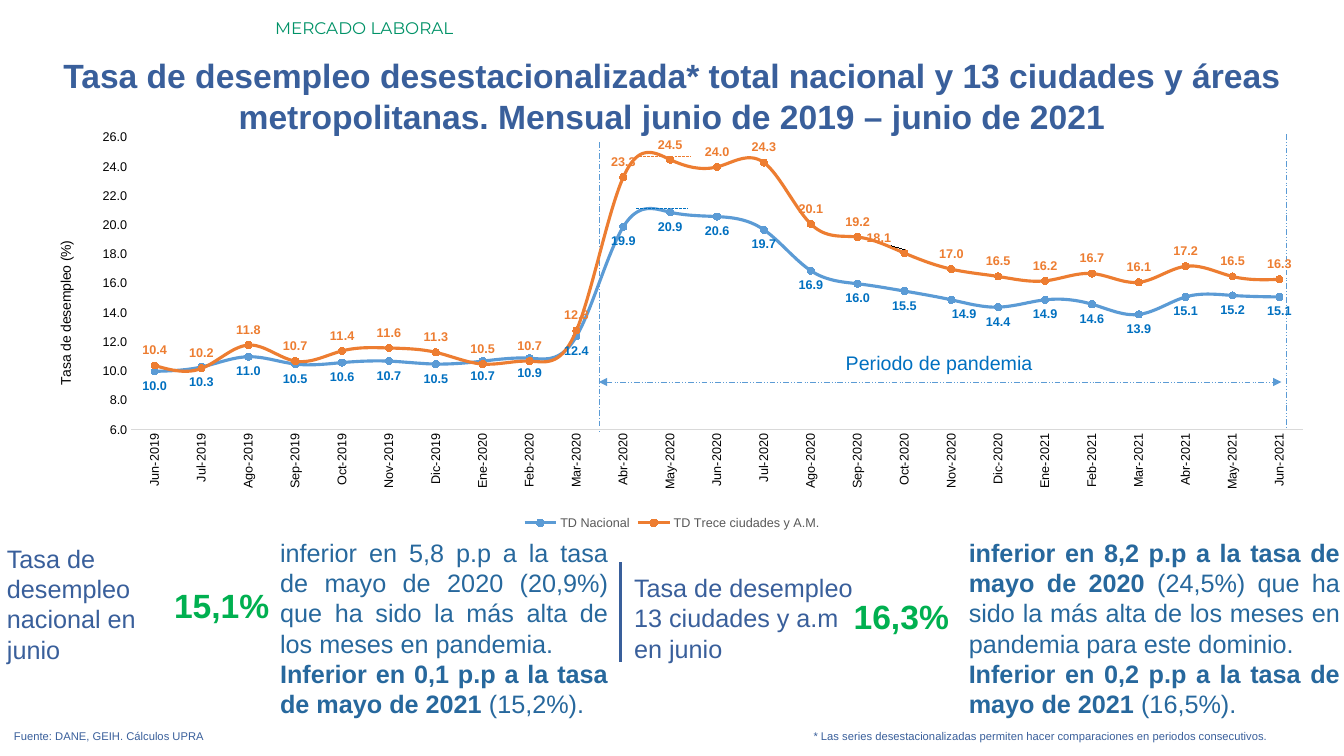
from dataclasses import dataclass

from lxml import etree
from pptx import Presentation
from pptx.chart.chart import Chart
from pptx.chart.data import CategoryChartData
from pptx.dml.color import RGBColor
from pptx.enum.chart import (
    XL_CHART_TYPE, XL_LABEL_POSITION, XL_LEGEND_POSITION, XL_MARKER_STYLE,
    XL_TICK_MARK)
from pptx.enum.dml import MSO_LINE
from pptx.enum.shapes import MSO_CONNECTOR
from pptx.enum.text import MSO_AUTO_SIZE, PP_ALIGN
from pptx.oxml.ns import qn
from pptx.util import Inches, Pt

LEFT, MID, RIGHT, JUST = (
    PP_ALIGN.LEFT, PP_ALIGN.CENTER, PP_ALIGN.RIGHT, PP_ALIGN.JUSTIFY)
DASH, DOT, DOTS = (
    MSO_LINE.LONG_DASH, MSO_LINE.LONG_DASH_DOT, MSO_LINE.DASH_DOT_DOT)
ABOVE, BELOW = XL_LABEL_POSITION.ABOVE, XL_LABEL_POSITION.BELOW
LINES = XL_CHART_TYPE.LINE_MARKERS
CIRCLE = XL_MARKER_STYLE.CIRCLE
NO_TICK = XL_TICK_MARK.NONE
BOTTOM = XL_LEGEND_POSITION.BOTTOM
STRAIGHT = MSO_CONNECTOR.STRAIGHT
FIT = MSO_AUTO_SIZE.SHAPE_TO_FIT_TEXT

NAVY = RGBColor(0x39, 0x5F, 0x9B)
TEAL = RGBColor(0x27, 0x68, 0x9D)
PINE = RGBColor(0x00, 0x92, 0x67)
GREEN = RGBColor(0x00, 0xB0, 0x50)
BLUE = RGBColor(0x00, 0x70, 0xC0)
SKY = RGBColor(0x5B, 0x9B, 0xD5)
ORANGE = RGBColor(0xED, 0x7D, 0x31)
BLACK = RGBColor(0x00, 0x00, 0x00)
GREY = RGBColor(0x59, 0x59, 0x59)
PALE = RGBColor(0xD9, 0xD9, 0xD9)

Run = tuple[str, bool]


@dataclass
class Note:
    box: tuple[float, float, float, float]
    paras: list[list[Run]]
    size: float
    color: RGBColor
    align: PP_ALIGN = LEFT
    font: str = "Arial"
    tab: float = 0


@dataclass
class Rule:
    start: tuple[float, float]
    end: tuple[float, float]
    color: RGBColor
    width: float
    dash: MSO_LINE | None = None
    heads: bool = False


@dataclass
class Trend:
    name: str
    vals: list[float]
    color: RGBColor
    ink: RGBColor
    side: XL_LABEL_POSITION
    point: int
    shift: float


NOTES = [
    Note((2.63, 0.13, 10.7, 0.3), [[("MERCADO LABORAL", False)]], 12, PINE,
         font="Montserrat"),
    Note((0, 0.5, 13.33, 0.91),
         [[("Tasa de desempleo desestacionalizada* total nacional y 13 ciudades y áreas "
            "metropolitanas. Mensual junio de 2019 – junio de 2021", True)]],
         24, NAVY, MID),
    Note((0.04, 7.19, 12.91, 0.24),
         [[("Fuente: DANE, GEIH. Cálculos UPRA\t* Las series desestacionalizadas "
            "permiten hacer comparaciones en periodos consecutivos.", False)]],
         8, NAVY, tab=7.93),
    Note((-0.03, 5.34, 2.22, 1.31),
         [[("Tasa de desempleo nacional en", False)], [("junio", False)]], 18, NAVY),
    Note((1.61, 5.75, 1.16, 0.5), [[("15,1%", True)]], 24, GREEN, RIGHT),
    Note((2.68, 5.28, 3.45, 1.92),
         [[("inferior en 5,8 p.p a la tasa de mayo de 2020 (20,9%) que ha sido la más "
            "alta de los meses en pandemia.", False)],
          [("Inferior en 0,1 p.p a la tasa de mayo de 2021 ", True),
           ("(15,2%).", False)]], 18, TEAL, JUST),
    Note((6.19, 5.63, 2.45, 1.31),
         [[("Tasa de desempleo", False)], [("13 ciudades y a.m en junio", False)]],
         18, NAVY),
    Note((8.06, 5.86, 1.45, 0.5), [[("16,3%", True)]], 24, GREEN, RIGHT),
    Note((9.51, 5.28, 3.88, 1.92),
         [[("inferior en 8,2 p.p a la tasa de mayo de 2020 ", True),
           ("(24,5%) que ha sido la más alta de los meses en pandemia para este "
            "dominio.", False)],
          [("Inferior en 0,2 p.p a la tasa de mayo de 2021 ", True),
           ("(16,5%).", False)]], 18, TEAL, JUST),
    Note((8.29, 3.43, 2.63, 0.34), [[("Periodo de pandemia", False)]], 14, BLUE),
]
BACK = [
    Rule((6.15, 5.58), (6.15, 6.57), NAVY, 2.25),
    Rule((5.94, 1.41), (5.94, 4.29), SKY, 0.5, DOT),
    Rule((12.76, 1.33), (12.76, 4.25), SKY, 0.5, DOTS),
    Rule((5.94, 3.79), (12.71, 3.79), SKY, 0.5, DOTS, True),
]
FRONT = [
    Rule((6.3, 1.55), (6.85, 1.55), ORANGE, 0.25, DASH),
    Rule((6.31, 2.07), (6.82, 2.07), BLUE, 0.25, DASH),
]
TRENDS = [
    Trend("TD Nacional",
          [10, 10.3, 11, 10.5, 10.6, 10.7, 10.5, 10.7, 10.9, 12.4, 19.9, 20.9, 20.6,
           19.7, 16.9, 16, 15.5, 14.9, 14.4, 14.9, 14.6, 13.9, 15.1, 15.2, 15.1],
          SKY, BLUE, BELOW, 17, 0.01),
    Trend("TD Trece ciudades y A.M.",
          [10.4, 10.2, 11.8, 10.7, 11.4, 11.6, 11.3, 10.5, 10.7, 12.8, 23.3, 24.5, 24,
           24.3, 20.1, 19.2, 18.1, 17, 16.5, 16.2, 16.7, 16.1, 17.2, 16.5, 16.3],
          ORANGE, ORANGE, ABOVE, 16, -0.02),
]
MONTHS = "Ene Feb Mar Abr May Jun Jul Ago Sep Oct Nov Dic".split()
CATS = [f"{MONTHS[n % 12]}-{2019 + n // 12}" for n in range(5, 30)]
FORMAT = "#,##0.0"
UPWARD = "-5400000"


def add_note(slide, note: Note) -> None:
    frame = slide.shapes.add_textbox(*map(Inches, note.box)).text_frame
    frame.word_wrap = True
    frame.auto_size = FIT
    for i, runs in enumerate(note.paras):
        para = frame.add_paragraph() if i else frame.paragraphs[0]
        para.alignment = note.align
        if note.tab:
            tabs = etree.SubElement(para._p.get_or_add_pPr(), qn("a:tabLst"))
            etree.SubElement(tabs, qn("a:tab"), pos=str(Inches(note.tab)), algn="l")
        for text, bold in runs:
            run = para.add_run()
            run.text = text
            style(run.font, note.size, note.color, bold, note.font)


def style(font, size: float, color: RGBColor, bold: bool = False,
          name: str = "Arial") -> None:
    font.size, font.bold, font.name = Pt(size), bold, name
    font.color.rgb = color


def add_rule(slide, rule: Rule) -> None:
    line = slide.shapes.add_connector(STRAIGHT, *map(Inches, rule.start + rule.end))
    line.line.color.rgb = rule.color
    line.line.width = Pt(rule.width)
    if rule.dash:
        line.line.dash_style = rule.dash
    if rule.heads:
        for tag in ("a:headEnd", "a:tailEnd"):
            etree.SubElement(line.line._get_or_add_ln(), qn(tag), type="triangle")
    etree.SubElement(line._element.spPr, qn("a:effectLst"))


def set_place(part, spot: int, **vals: str | float) -> None:
    old = part.find(qn("c:layout"))
    if old is not None:
        part.remove(old)
    layout = etree.Element(qn("c:layout"))
    manual = etree.SubElement(layout, qn("c:manualLayout"))
    for key, val in vals.items():
        etree.SubElement(manual, qn(f"c:{key}"), val=str(val))
    part.insert(spot, layout)


def add_trend(series, trend: Trend) -> None:
    series.smooth = True
    series.format.line.color.rgb = trend.color
    series.format.line.width = Pt(2.25)
    mark = series.marker
    mark.style, mark.size = CIRCLE, 5
    mark.format.fill.solid()
    mark.format.fill.fore_color.rgb = trend.color
    mark.format.line.color.rgb = trend.color
    labels = series.data_labels
    labels.show_value = True
    labels.number_format, labels.number_format_is_linked = FORMAT, False
    label = series.points[trend.point].data_label
    for item in (labels, label):
        item.position = trend.side
        style(item.font, 9, trend.ink, True)
    set_place(label._dLbl, 1, x=trend.shift, y=0)


def set_axes(chart: Chart) -> None:
    cat, val = chart.category_axis, chart.value_axis
    for axis in (cat, val):
        axis.major_tick_mark = axis.minor_tick_mark = NO_TICK
        axis.has_major_gridlines = False
        style(axis.tick_labels.font, 9, BLACK)
    cat.format.line.color.rgb = PALE
    cat.format.line.width = Pt(0.75)
    cat._element.txPr.find(qn("a:bodyPr")).set("rot", UPWARD)
    val.format.line.fill.background()
    val.minimum_scale, val.maximum_scale, val.major_unit = 6, 26, 2
    val.tick_labels.number_format = FORMAT
    val.tick_labels.number_format_is_linked = False
    title = val.axis_title
    title.text_frame.text = "Tasa de desempleo (%)"
    title.text_frame._txBody.find(qn("a:bodyPr")).set("rot", UPWARD)
    style(title.text_frame.paragraphs[0].runs[0].font, 10, BLACK)
    set_place(title._element, 1, xMode="edge", yMode="edge", x=0.02, y=0.29)


def add_plot(slide) -> None:
    data = CategoryChartData(number_format=FORMAT)
    data.categories = CATS
    for trend in TRENDS:
        data.add_series(trend.name, trend.vals)
    box = map(Inches, (0.28, 1.16, 12.77, 4.14))
    chart = slide.shapes.add_chart(LINES, *box, data).chart
    style(chart.font, 10, BLACK)
    chart.has_title = False
    chart.has_legend = True
    chart.legend.position = BOTTOM
    chart.legend.include_in_layout = False
    style(chart.legend.font, 9, GREY)
    chart.plots[0].vary_by_categories = False
    for series, trend in zip(chart.series, TRENDS):
        add_trend(series, trend)
    set_axes(chart)
    root = chart._chartSpace.chart
    set_place(root.plotArea, 0, layoutTarget="inner", xMode="edge", yMode="edge",
              x=0.08, y=0.05, w=0.91, h=0.7)
    clear = etree.Element(qn("c:spPr"))
    etree.SubElement(clear, qn("a:noFill"))
    etree.SubElement(etree.SubElement(clear, qn("a:ln")), qn("a:noFill"))
    root.addnext(clear)


def main() -> None:
    deck = Presentation()
    deck.slide_width, deck.slide_height = Inches(13.33), Inches(7.5)
    slide = deck.slides.add_slide(deck.slide_layouts[6])
    for note in NOTES:
        add_note(slide, note)
    for rule in BACK:
        add_rule(slide, rule)
    add_plot(slide)
    for rule in FRONT:
        add_rule(slide, rule)
    deck.save("out.pptx")


if __name__ == "__main__":
    main()
